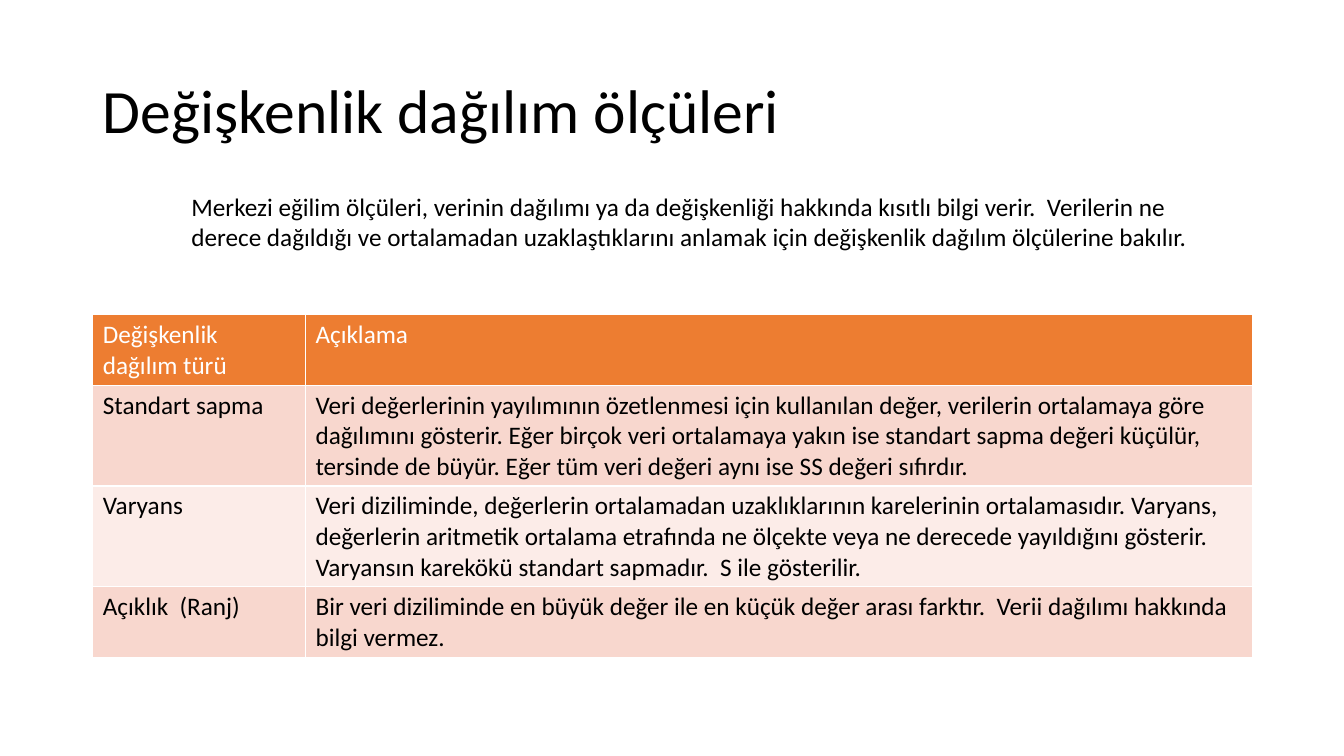
"""Build a slide on measures of variability with an intro and a table."""
from pptx import Presentation
from pptx import util as u
from pptx.dml.color import RGBColor
from pptx.enum import text

BLACK = RGBColor(0x00, 0x00, 0x00)
WHITE = RGBColor(0xFF, 0xFF, 0xFF)
ORANGE = RGBColor(0xED, 0x7D, 0x31)
ROSE = RGBColor(0xF8, 0xD7, 0xCE)
PALE_ROSE = RGBColor(0xFC, 0xEC, 0xE8)

prs = Presentation()
prs.slide_width, prs.slide_height = u.Inches(13.33), u.Inches(7.5)
s = prs.slides.add_slide(prs.slide_layouts[6])

LEFT, WIDTH = u.Inches(0.92), u.Inches(11.5)
LINE, PADDING = u.Inches(0.3), u.Inches(0.1)


def write(tf, words, size=18, color=BLACK, spacing=None, anchor=text.MSO_ANCHOR.TOP):
    tf.word_wrap = True
    tf.vertical_anchor = anchor
    p = tf.paragraphs[0]
    p.line_spacing = spacing
    r = p.add_run()
    r.text = words
    r.font.name, r.font.size, r.font.bold = "Calibri", u.Pt(size), False
    r.font.color.rgb = color


title = s.shapes.add_textbox(LEFT, u.Inches(0.4), WIDTH, u.Inches(1.45))
write(title.text_frame, "Değişkenlik dağılım ölçüleri", size=44, spacing=0.9,
      anchor=text.MSO_ANCHOR.MIDDLE)

rows = [
    (2, "Değişkenlik dağılım türü", "Açıklama"),
    (3, "Standart sapma",
     "Veri değerlerinin yayılımının özetlenmesi için kullanılan değer, verilerin "
     "ortalamaya göre dağılımını gösterir. Eğer birçok veri ortalamaya yakın ise "
     "standart sapma değeri küçülür,  tersinde de büyür. Eğer tüm veri değeri aynı "
     "ise SS değeri sıfırdır."),
    (3, "Varyans",
     "Veri diziliminde, değerlerin ortalamadan uzaklıklarının karelerinin "
     "ortalamasıdır. Varyans, değerlerin aritmetik ortalama etrafında ne ölçekte veya "
     "ne derecede yayıldığını gösterir.   Varyansın karekökü standart sapmadır.  "
     "S ile gösterilir."),
    (2, "Açıklık  (Ranj)",
     "Bir veri diziliminde en büyük değer ile en küçük değer arası farktır.  Verii "
     "dağılımı hakkında bilgi vermez."),
]
height = sum(lines * LINE + PADDING for lines, *_ in rows)
table = s.shapes.add_table(len(rows), 2, LEFT, u.Inches(3.12), WIDTH, height).table
table.columns[0].width = u.Inches(2.11)
table.columns[1].width = WIDTH - u.Inches(2.11)

for i, (lines, *words) in enumerate(rows):
    table.rows[i].height = lines * LINE + PADDING
    fill = ORANGE if i == 0 else ROSE if i % 2 else PALE_ROSE
    for cell, entry in zip(table.rows[i].cells, words):
        cell.fill.solid()
        cell.fill.fore_color.rgb = fill
        write(cell.text_frame, entry, color=BLACK if i else WHITE)

intro = s.shapes.add_textbox(u.Inches(1.8), u.Inches(1.85), u.Inches(10.42), u.Inches(0.71))
write(intro.text_frame,
      "Merkezi eğilim ölçüleri, verinin dağılımı ya da değişkenliği hakkında kısıtlı "
      "bilgi verir.  Verilerin ne derece dağıldığı ve ortalamadan uzaklaştıklarını "
      "anlamak için değişkenlik dağılım ölçülerine bakılır.")

prs.save("out.pptx")
